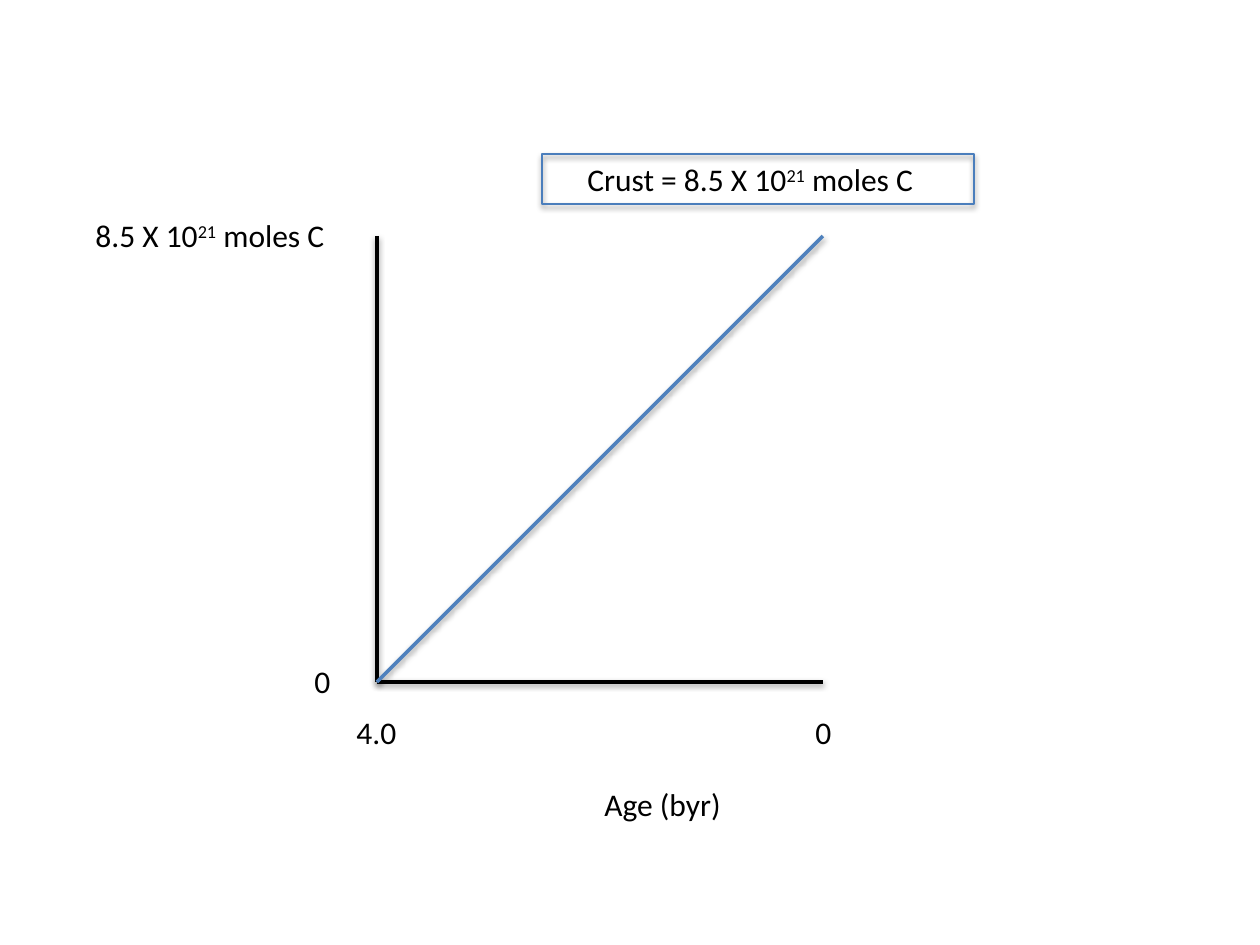
"""Build a slide plotting crustal carbon growth against age."""
from dataclasses import dataclass

from lxml.etree import SubElement
from pptx import Presentation
from pptx.dml.color import RGBColor
from pptx.enum.shapes import MSO_CONNECTOR, MSO_SHAPE
from pptx.enum.text import MSO_AUTO_SIZE
from pptx.oxml.ns import qn
from pptx.util import Emu, Pt

PX_PER_INCH = 126
LABEL_HEIGHT = 50
AXIS_LEFT, AXIS_RIGHT = 377, 823
AXIS_TOP, AXIS_BOTTOM = 236, 682


@dataclass(frozen=True)
class Theme:
    """Hold the colours and type of the slide."""
    ink: RGBColor = RGBColor(0x00, 0x00, 0x00)
    trend: RGBColor = RGBColor(0x4F, 0x81, 0xBD)
    frame: RGBColor = RGBColor(0x4B, 0x7E, 0xBC)
    font: str = "Calibri"
    size: int = 18


THEME = Theme()


def px(value):
    """Turn pixels into EMU."""
    return Emu(round(value * 914400 / PX_PER_INCH))


def add_shadow(shape, distance, opacity):
    """Give a shape a soft shadow falling straight down."""
    effects = SubElement(shape.element.spPr, qn("a:effectLst"))
    shadow = SubElement(effects, qn("a:outerShdw"), blurRad=str(Pt(3.15)),
                        dist=str(Pt(distance)), dir="5400000", rotWithShape="0")
    color = SubElement(shadow, qn("a:srgbClr"), val=str(THEME.ink))
    SubElement(color, qn("a:alpha"), val=str(opacity * 1000))


def add_line(slide, start, end, color):
    """Draw a straight shadowed line between two points."""
    line = slide.shapes.add_connector(
        MSO_CONNECTOR.STRAIGHT, *map(px, start + end))
    line.line.color.rgb = color
    line.line.width = Pt(2)
    add_shadow(line, 1.57, 38)


def add_frame(slide, left, top, width):
    """Draw an unfilled shadowed rectangle."""
    frame = slide.shapes.add_shape(
        MSO_SHAPE.RECTANGLE, *map(px, (left, top, width, LABEL_HEIGHT)))
    frame.fill.background()
    frame.line.color.rgb = THEME.frame
    frame.line.width = Pt(1.5)
    add_shadow(frame, 1.81, 35)


def add_label(slide, text, left, top, width):
    """Add a label in which text between carets is superscript."""
    box = slide.shapes.add_textbox(*map(px, (left, top, width, LABEL_HEIGHT)))
    box.text_frame.word_wrap = False
    box.text_frame.auto_size = MSO_AUTO_SIZE.SHAPE_TO_FIT_TEXT
    paragraph = box.text_frame.paragraphs[0]
    paragraph.font.name = THEME.font
    paragraph.font.size = Pt(THEME.size)
    paragraph.font.color.rgb = THEME.ink
    for index, part in enumerate(text.split("^")):
        run = paragraph.add_run()
        run.text = part
        if index % 2:
            run._r.get_or_add_rPr().set("baseline", "30000")


def main():
    """Build and save the slide."""
    presentation = Presentation()
    presentation.slide_width = px(10 * PX_PER_INCH)
    presentation.slide_height = px(7.5 * PX_PER_INCH)
    slide = presentation.slides.add_slide(presentation.slide_layouts[6])

    origin = (AXIS_LEFT, AXIS_BOTTOM)
    add_line(slide, (AXIS_LEFT, AXIS_TOP), origin, THEME.ink)
    add_line(slide, origin, (AXIS_RIGHT, AXIS_BOTTOM), THEME.ink)
    add_line(slide, origin, (AXIS_RIGHT, AXIS_TOP), THEME.trend)

    amount = "8.5 X 10^21^ moles C"
    add_label(slide, f"Crust = {amount}", 575, 154, 368)
    add_frame(slide, 542, 154, 432)
    for text, left, top, width in (
        ("Age (byr)", 592, 779, 142),
        ("4.0", 344, 707, 66),
        ("0", 803, 707, 42),
        ("0", 302, 656, 42),
        (amount, 83, 210, 261),
    ):
        add_label(slide, text, left, top, width)

    presentation.save("out.pptx")


if __name__ == "__main__":
    main()
